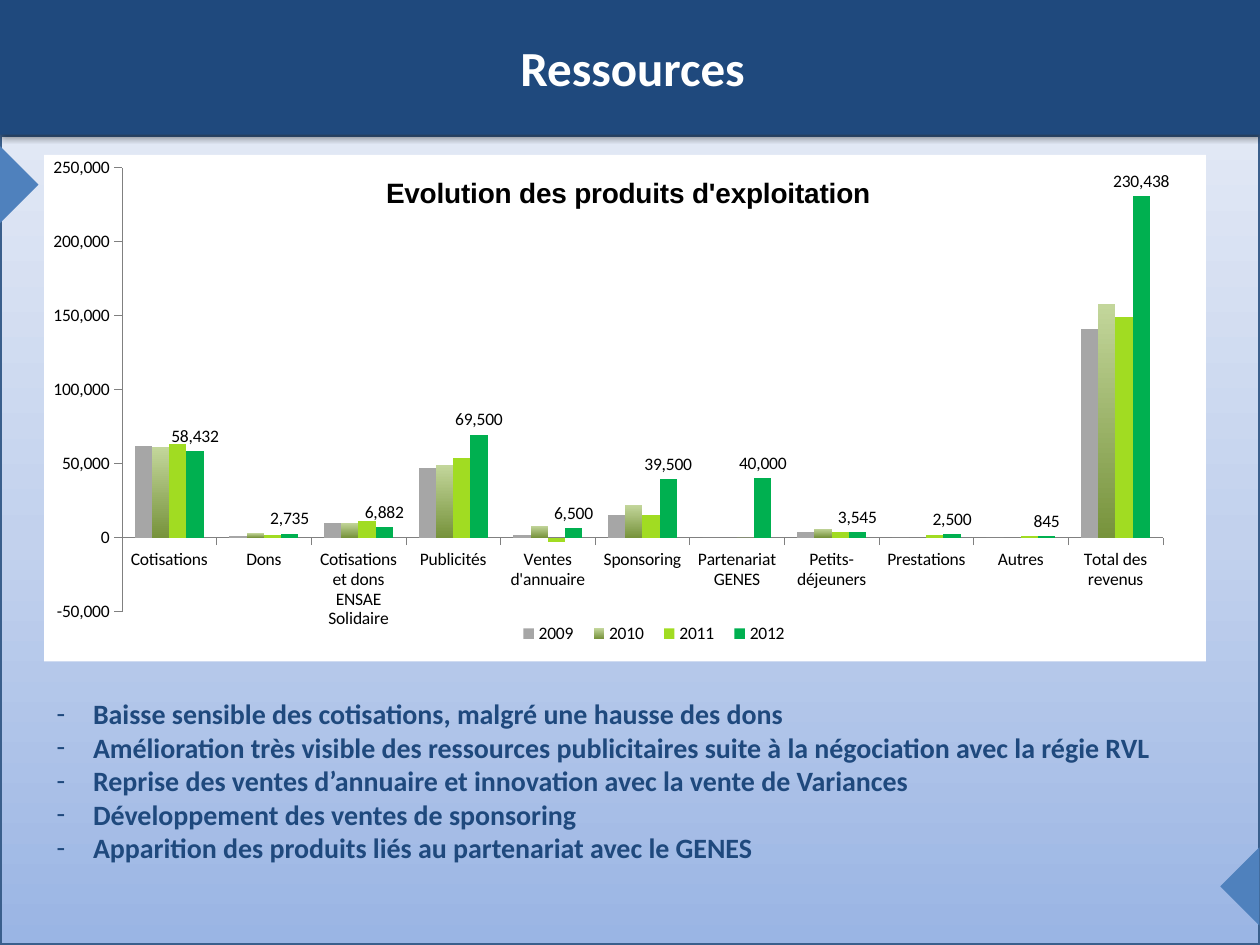
"""Build the Ressources slide with its chart of operating income."""
from typing import Any, NamedTuple, Optional

import lxml.etree
import pptx
import pptx.chart.data
import pptx.dml.color
import pptx.enum.chart
import pptx.enum.shapes
import pptx.enum.text
import pptx.oxml
import pptx.oxml.ns
import pptx.util

Inches = pptx.util.Inches
Pt = pptx.util.Pt
qn = pptx.oxml.ns.qn
Kind = pptx.enum.shapes.MSO_SHAPE
Align = pptx.enum.text.PP_ALIGN
Anchor = pptx.enum.text.MSO_ANCHOR

COLORS = {
    "white": "FFFFFF", "black": "000000", "navy": "1F497D", "blue": "4F81BD",
    "border": "3A5F8C", "axis": "808080", "gray": "A6A6A6",
    "lime": "A1DC22", "green": "00B050",
}
PANEL_STOPS = ((0, "9AB5E4"), (50, "C2D1ED"), (100, "E1E8F5"))
OLIVE_STOPS = ((0, "C3D69B"), (100, "77933C"))

CATEGORIES = (
    "Cotisations", "Dons", "Cotisations et dons ENSAE Solidaire", "Publicités",
    "Ventes d'annuaire", "Sponsoring", "Partenariat GENES", "Petits-déjeuners",
    "Prestations", "Autres", "Total des revenus",
)
COMMENTS = (
    "Baisse sensible des cotisations, malgré une hausse des dons",
    "Amélioration très visible des ressources publicitaires suite à la négociation avec la régie RVL",
    "Reprise des ventes d’annuaire et innovation avec la vente de Variances",
    "Développement des ventes de sponsoring",
    "Apparition des produits liés au partenariat avec le GENES",
)


class Box(NamedTuple):
    left: float
    top: float
    width: float
    height: float

    def lengths(self) -> list:
        return [Inches(value) for value in self]


class Panel(NamedTuple):
    box: Box
    kind: Any
    color: Optional[str] = None
    rotation: int = 0


class Year(NamedTuple):
    name: str
    values: tuple
    color: Optional[str] = None


PANELS = (
    Panel(Box(0, 1.07, 10, 6.43), Kind.RECTANGLE),
    Panel(Box(-0.16, 1.31, 0.62, 0.31), Kind.ISOSCELES_TRIANGLE, "blue", 90),
    Panel(Box(9.53, 6.88, 0.62, 0.31), Kind.ISOSCELES_TRIANGLE, "blue", 270),
    Panel(Box(0, 0, 10, 1.07), Kind.RECTANGLE, "navy"),
)
YEARS = (
    Year("2009", (62000, 1000, 10000, 47000, 2000, 15000, 0, 4000, 0, 0, 141000), "gray"),
    Year("2010", (61000, 3000, 10000, 49000, 8000, 22000, 0, 6000, 0, 0, 158000)),
    Year("2011", (63000, 2000, 11000, 54000, -3000, 15000, 0, 4000, 2000, 1000, 149000), "lime"),
    Year("2012", (58432, 2735, 6882, 69500, 6500, 39500, 40000, 3545, 2500, 845, 230438), "green"),
)


def rgb(name: str) -> pptx.dml.color.RGBColor:
    return pptx.dml.color.RGBColor.from_string(COLORS[name])


def set_font(font: Any, size: float, color: str = "black", bold: bool = False,
             name: str = "Calibri") -> None:
    font.name, font.size, font.bold = name, Pt(size), bold
    font.color.rgb = rgb(color)


def set_gradient(fill: Any, element: Any, stops: tuple, angle: int) -> None:
    fill.gradient()
    fill.gradient_angle = angle
    stop_list = next(element.iter(qn("a:gsLst")))
    for stop in list(stop_list):
        stop_list.remove(stop)
    for position, color in stops:
        stop = lxml.etree.SubElement(stop_list, qn("a:gs"), pos=str(position * 1000))
        lxml.etree.SubElement(stop, qn("a:srgbClr"), val=color)


def add_panel(slide: Any, panel: Panel) -> Any:
    shape = slide.shapes.add_shape(panel.kind, *panel.box.lengths())
    shape.shadow.inherit = False
    shape.rotation = panel.rotation
    if panel.color:
        shape.fill.solid()
        shape.fill.fore_color.rgb = rgb(panel.color)
        shape.line.fill.background()
    else:
        set_gradient(shape.fill, shape.element, PANEL_STOPS, 90)
        shape.line.color.rgb = rgb("border")
        shape.line.width = Pt(2)
    return shape


def add_shadow(shape: Any) -> None:
    effects = shape.element.spPr.find(qn("a:effectLst"))
    shadow = lxml.etree.SubElement(
        effects, qn("a:outerShdw"), blurRad=str(Pt(3.1)), dist=str(Pt(1.8)),
        dir="5400000", rotWithShape="0")
    color = lxml.etree.SubElement(shadow, qn("a:srgbClr"), val=COLORS["black"])
    lxml.etree.SubElement(color, qn("a:alpha"), val="35000")


def add_text(slide: Any, box: Box, lines: tuple, *, size: float, color: str,
             align: Any = Align.LEFT, anchor: Any = Anchor.TOP,
             bullet: Optional[str] = None, indent: float = 0.29) -> None:
    frame = slide.shapes.add_textbox(*box.lengths()).text_frame
    frame.word_wrap = True
    frame.vertical_anchor = anchor
    for index, line in enumerate(lines):
        paragraph = frame.paragraphs[0] if index == 0 else frame.add_paragraph()
        paragraph.alignment = align
        if bullet:
            properties = paragraph._p.get_or_add_pPr()
            properties.set("marL", str(Inches(indent)))
            properties.set("indent", str(-Inches(indent)))
            lxml.etree.SubElement(properties, qn("a:buFont"), typeface="Calibri")
            lxml.etree.SubElement(properties, qn("a:buChar"), char=bullet)
        run = paragraph.add_run()
        run.text = line
        set_font(run.font, size, color, bold=True)


def place(element: Any, index: int, **settings: Any) -> None:
    for layout in element.findall(qn("c:layout")):
        element.remove(layout)
    layout = pptx.oxml.parse_xml(f'<c:layout {pptx.oxml.ns.nsdecls("c")}/>')
    manual = lxml.etree.SubElement(layout, qn("c:manualLayout"))
    for name, value in settings.items():
        lxml.etree.SubElement(manual, qn(f"c:{name}"), val=str(value))
    element.insert(index, layout)


def style_axis(axis: Any) -> None:
    axis.has_major_gridlines = False
    axis.major_tick_mark = pptx.enum.chart.XL_TICK_MARK.OUTSIDE
    axis.format.line.color.rgb = rgb("axis")
    axis.format.line.width = Pt(0.25)
    set_font(axis.tick_labels.font, 10)
    body = axis._element.find(qn("c:txPr")).find(qn("a:bodyPr"))
    body.set("rot", "0")
    body.set("vert", "horz")


def add_income_chart(slide: Any, box: Box) -> None:
    data = pptx.chart.data.CategoryChartData(number_format="#,##0")
    data.categories = CATEGORIES
    for year in YEARS:
        data.add_series(year.name, year.values)
    chart = slide.shapes.add_chart(
        pptx.enum.chart.XL_CHART_TYPE.COLUMN_CLUSTERED, *box.lengths(), data).chart
    set_font(chart.font, 10)
    area = pptx.oxml.parse_xml(
        f'<c:spPr {pptx.oxml.ns.nsdecls("c", "a")}><a:solidFill><a:srgbClr val="{COLORS["white"]}"/>'
        '</a:solidFill><a:ln><a:noFill/></a:ln></c:spPr>')
    chart._chartSpace.chart.addnext(area)

    chart.has_title = True
    chart.chart_title.text_frame.text = "Evolution des produits d'exploitation"
    title_run = chart.chart_title.text_frame.paragraphs[0].runs[0]
    set_font(title_run.font, 16, bold=True, name="Arial")
    chart.has_legend = True
    chart.legend.position = pptx.enum.chart.XL_LEGEND_POSITION.BOTTOM
    chart.legend.include_in_layout = False
    set_font(chart.legend.font, 10)
    place(chart._chartSpace.chart.plotArea, 0, layoutTarget="inner", xMode="edge",
          yMode="edge", x=0.067, y=0.025, w=0.896, h=0.877)
    place(chart.chart_title._element, 1, xMode="edge", yMode="edge", x=0.29, y=0.03)
    place(chart.legend._element, 1, xMode="edge", yMode="edge", x=0.4, y=0.92, w=0.25, h=0.05)

    style_axis(chart.category_axis)
    style_axis(chart.value_axis)
    chart.value_axis.minimum_scale = -50000
    chart.value_axis.maximum_scale = 250000
    chart.value_axis.major_unit = 50000
    chart.value_axis.tick_labels.number_format = "#,##0"
    chart.value_axis.tick_labels.number_format_is_linked = False

    plot = chart.plots[0]
    plot.vary_by_categories = False
    plot.gap_width, plot.overlap = 150, 0
    for year, series in zip(YEARS, plot.series):
        series.invert_if_negative = False
        if year.color:
            series.format.fill.solid()
            series.format.fill.fore_color.rgb = rgb(year.color)
        else:
            set_gradient(series.format.fill, series._element, OLIVE_STOPS, 270)
    labels = plot.series[-1].data_labels
    labels.show_value = True
    labels.number_format, labels.number_format_is_linked = "#,##0", False
    labels.position = pptx.enum.chart.XL_LABEL_POSITION.OUTSIDE_END
    set_font(labels.font, 10)


def main() -> None:
    presentation = pptx.Presentation()
    presentation.slide_width, presentation.slide_height = Inches(10), Inches(7.5)
    slide = presentation.slides.add_slide(presentation.slide_layouts[6])
    header = [add_panel(slide, panel) for panel in PANELS][-1]
    add_shadow(header)
    add_text(slide, Box(2.48, 0.21, 5.08, 0.64), ("Ressources",), size=28, color="white",
             align=Align.CENTER, anchor=Anchor.MIDDLE)
    add_text(slide, Box(0.35, 5.48, 9.21, 1.45), COMMENTS, size=16, color="navy", bullet="-")
    add_income_chart(slide, Box(0.35, 1.23, 9.22, 4.02))
    presentation.save("out.pptx")


if __name__ == "__main__":
    main()
